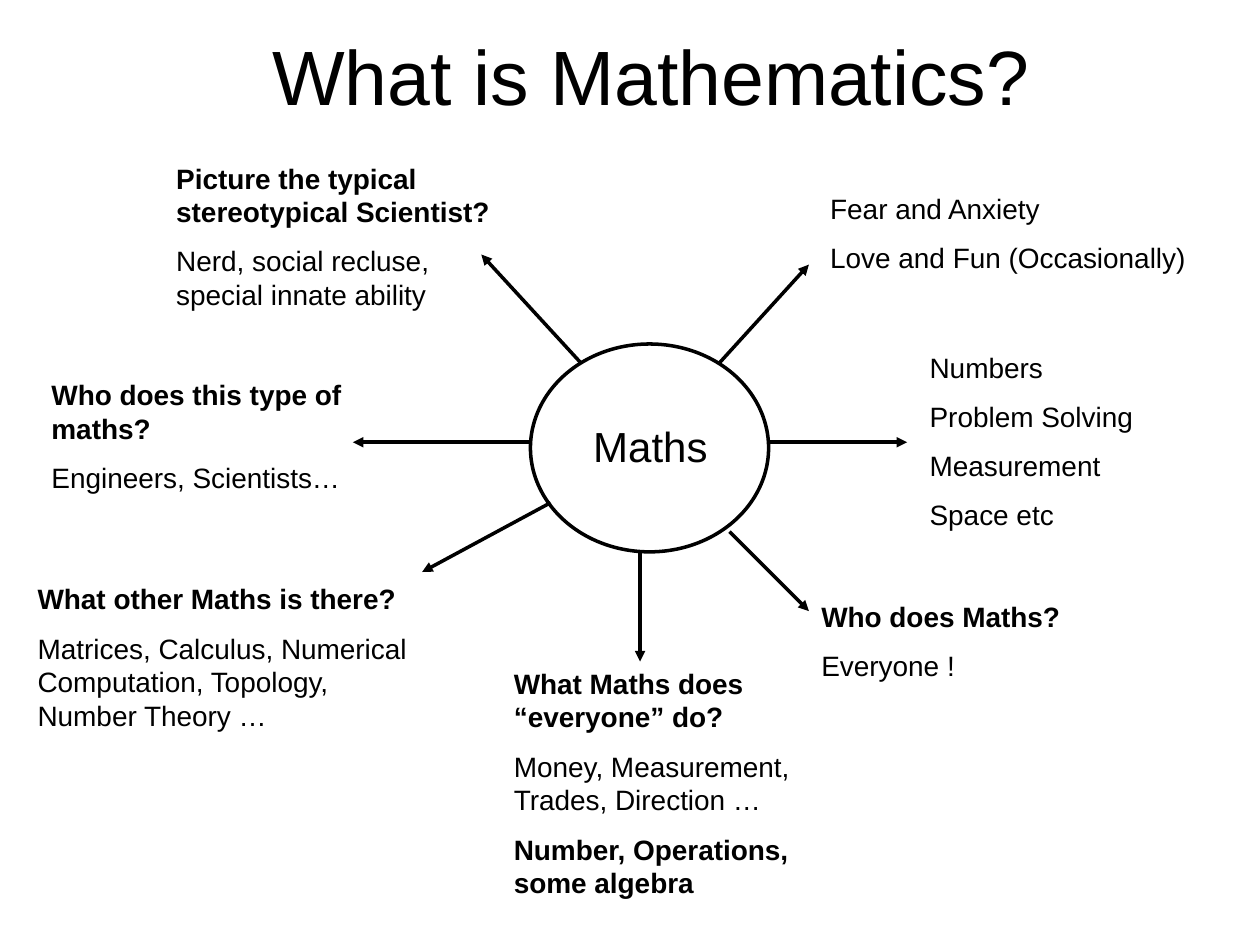
from lxml import etree
from pptx import Presentation
from pptx.dml.color import RGBColor
from pptx.enum.shapes import MSO_CONNECTOR, MSO_SHAPE
from pptx.enum.text import MSO_ANCHOR, PP_ALIGN
from pptx.oxml.ns import qn
from pptx.util import Pt

STRAIGHT = MSO_CONNECTOR.STRAIGHT
OVAL = MSO_SHAPE.OVAL
MIDDLE = MSO_ANCHOR.MIDDLE
CENTER, LEFT = PP_ALIGN.CENTER, PP_ALIGN.LEFT

PX = 9144
INK = "000000"
BOLD, PLAIN = True, False

BRANCHES = [
    ((610, 351, 720, 351), (728, 273, 220, 157),
     [("Numbers", PLAIN), ("Problem Solving", PLAIN),
      ("Measurement", PLAIN), ("Space etc", PLAIN)]),
    ((571, 288, 642, 210), (649, 147, 315, 77),
     [("Fear and Anxiety", PLAIN), ("Love and Fun (Occasionally)", PLAIN)]),
    ((579, 422, 642, 485), (642, 471, 252, 77),
     [("Who does Maths?", BOLD), ("Everyone !", PLAIN)]),
    ((508, 438, 508, 525), (398, 524, 244, 197),
     [("What Maths does “everyone” do?", BOLD),
      ("Money, Measurement, Trades, Direction …", PLAIN),
      ("Number, Operations, some algebra", BOLD)]),
    ((437, 399, 335, 454), (20, 457, 319, 130),
     [("What other Maths is there?", BOLD),
      ("Matrices, Calculus, Numerical Computation, Topology, Number Theory …", PLAIN)]),
    ((421, 351, 280, 351), (31, 295, 319, 104),
     [("Who does this type of maths?", BOLD), ("Engineers, Scientists…", PLAIN)]),
    ((461, 288, 382, 202), (130, 123, 291, 170),
     [("Picture the typical stereotypical Scientist?", BOLD),
      ("Nerd, social recluse, special innate ability", PLAIN)]),
]


def emu(lengths):
    return [length * PX for length in lengths]


def paint(color_format, color):
    color_format.rgb = RGBColor.from_string(color)


def outline(line):
    paint(line.color, INK)
    line.width = Pt(2)


def write(frame, lines, size, align=LEFT):
    frame.word_wrap = True
    for index, (words, bold) in enumerate(lines):
        paragraph = frame.paragraphs[0] if index == 0 else frame.add_paragraph()
        paragraph.alignment = align
        paragraph.space_before = Pt(size * 0.56 if index else 0)
        run = paragraph.add_run()
        run.text = words
        for key, value in {"name": "Arial", "size": Pt(size), "bold": bold}.items():
            setattr(run.font, key, value)
        paint(run.font.color, INK)


def place_title(slide, box):
    title = slide.shapes.title
    for key, value in zip(("left", "top", "width", "height"), emu(box)):
        setattr(title, key, value)
    title.text_frame.vertical_anchor = MIDDLE
    write(title.text_frame, [("What is Mathematics?", PLAIN)], 44, CENTER)


def add_note(slide, box, lines, size=16):
    note = slide.shapes.add_textbox(*emu(box))
    write(note.text_frame, lines, size)


def add_hub(slide, box):
    left, top, width, height = box
    hub = slide.shapes.add_shape(OVAL, *emu(box))
    hub.shadow.inherit = False
    hub.fill.background()
    outline(hub.line)
    add_note(slide, (left + 40, top + 56, width - 24, 50), [("Maths", PLAIN)], 24)


def add_arrow(slide, ends):
    arrow = slide.shapes.add_connector(STRAIGHT, *emu(ends))
    outline(arrow.line)
    properties = arrow.element.spPr
    head = etree.SubElement(properties.find(qn("a:ln")), qn("a:tailEnd"))
    head.set("type", "triangle")
    etree.SubElement(properties, qn("a:effectLst"))


def add_branch(slide, ends, box, lines):
    add_arrow(slide, ends)
    add_note(slide, box, lines)


def main():
    deck = Presentation()
    deck.slide_width, deck.slide_height = emu((1000, 750))
    slide = deck.slides.add_slide(deck.slide_layouts[5])
    place_title(slide, (67, -3, 900, 125))
    add_hub(slide, (421, 273, 189, 165))
    for ends, box, lines in BRANCHES:
        add_branch(slide, ends, box, lines)
    deck.save("out.pptx")


if __name__ == "__main__":
    main()
